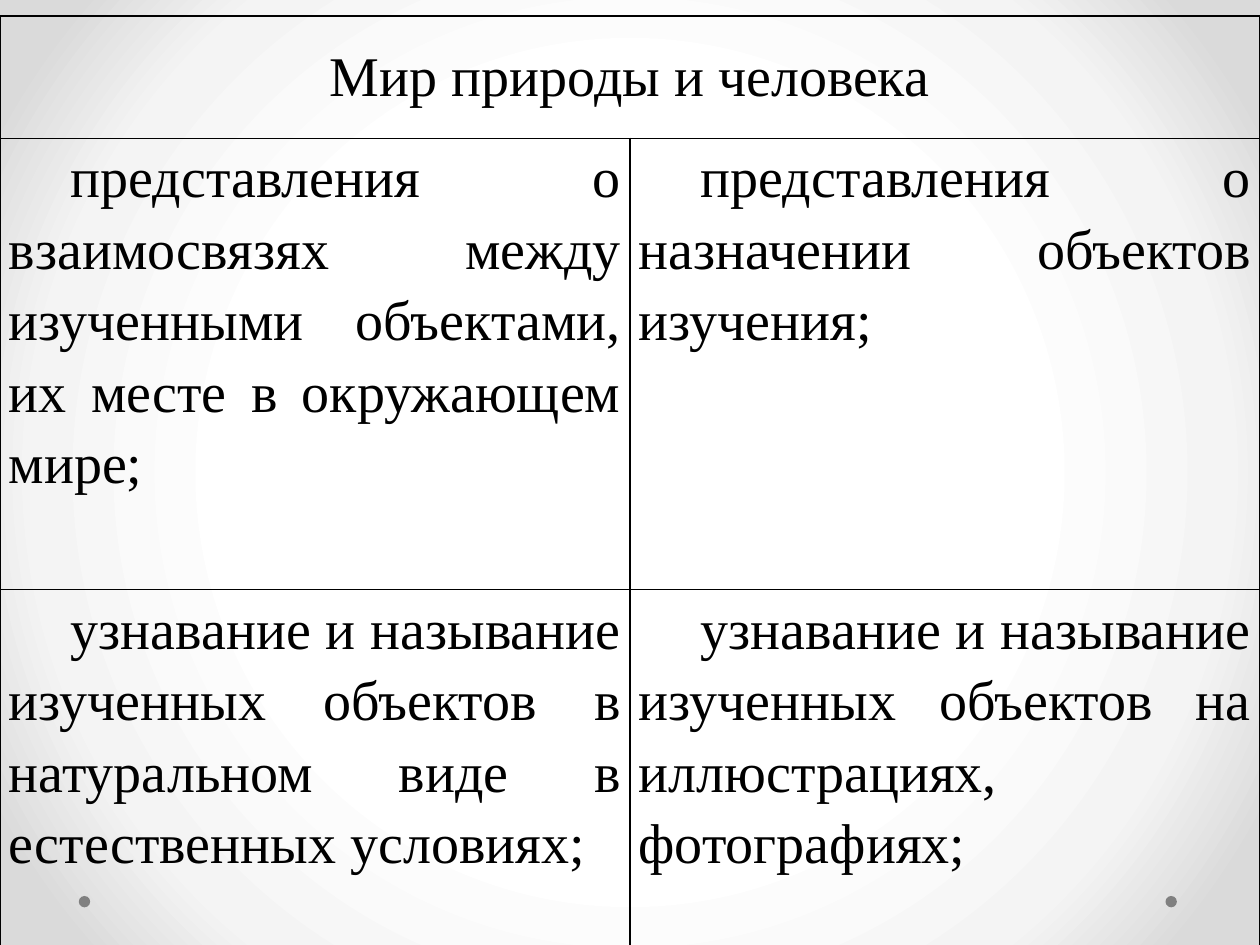
from lxml.etree import SubElement
from pptx import Presentation
from pptx.dml.color import RGBColor
from pptx.enum.shapes import MSO_SHAPE
from pptx.enum.text import PP_ALIGN
from pptx.oxml import parse_xml
from pptx.oxml.ns import nsdecls, qn
from pptx.util import Pt


class Theme:
    ink = "000000"
    dot = "808080"
    fade = [(50, "FFFFFF"), (76, "F4F4F4"), (92, "DADADA")]
    font = "Times New Roman"
    size = Pt(32)
    line = Pt(1)


WIDE, HIGH = 720, 540
TITLE = "Мир природы и человека"
ROWS = [
    ("представления о взаимосвязях между изученными объектами, "
     "их месте в окружающем мире;",
     "представления о назначении объектов изучения;"),
    ("узнавание и называние изученных объектов в натуральном виде "
     "в естественных условиях;",
     "узнавание и называние изученных объектов на иллюстрациях, "
     "фотографиях;"),
]
TALL = [70, 258, 255]

INSET = {"margin_left": Pt(5), "margin_right": Pt(5),
         "margin_top": 0, "margin_bottom": 0}
HEAD = {"alignment": PP_ALIGN.CENTER, "line_spacing": 1.5}
BODY = {"alignment": PP_ALIGN.JUSTIFY, "line_spacing": 1.15}
FONT = {"name": Theme.font, "size": Theme.size, "bold": False}
PLAIN = {"first_row": False, "horz_banding": False}


def apply(item, form):
    for key, value in form.items():
        setattr(item, key, value)


def set_back(slide):
    """Radial fade from a white centre; python-pptx has only linear ones."""
    stops = "".join(
        f'<a:gs pos="{pos * 1000}"><a:srgbClr val="{color}"/></a:gs>'
        for pos, color in Theme.fade)
    fade = parse_xml(
        f'<a:gradFill {nsdecls("a")} rotWithShape="1"><a:gsLst>{stops}</a:gsLst>'
        '<a:path path="circle"><a:fillToRect l="50000" t="50000" '
        'r="50000" b="50000"/></a:path></a:gradFill>')
    fill = slide.background.fill
    fill.solid()
    old = slide.element.find(".//" + qn("p:bgPr")).find(qn("a:solidFill"))
    old.getparent().replace(old, fade)


def add_dot(slide, left):
    dot = slide.shapes.add_shape(
        MSO_SHAPE.OVAL, Pt(left), Pt(512), Pt(6.5), Pt(6.5))
    dot.shadow.inherit = False
    dot.fill.solid()
    dot.fill.fore_color.rgb = RGBColor.from_string(Theme.dot)
    dot.line.fill.background()


def frame(cell):
    """Draw the four borders and leave the cell clear."""
    props = cell._tc.get_or_add_tcPr()
    for side in ("lnL", "lnR", "lnT", "lnB"):
        line = SubElement(props, qn("a:" + side), w=str(Theme.line))
        fill = SubElement(line, qn("a:solidFill"))
        SubElement(fill, qn("a:srgbClr"), val=Theme.ink)
    cell.fill.background()


def write(cell, text, form, indent=0):
    para = cell.text_frame.paragraphs[0]
    apply(para, form)
    para._p.get_or_add_pPr().set("indent", str(Pt(indent)))
    run = para.add_run()
    run.text = text
    apply(run.font, FONT)
    run.font.color.rgb = RGBColor.from_string(Theme.ink)


def add_grid(slide):
    grid = slide.shapes.add_table(
        len(TALL), 2, 0, Pt(9), Pt(WIDE), Pt(sum(TALL))).table
    apply(grid, PLAIN)
    for row, tall in zip(grid.rows, TALL):
        row.height = Pt(tall)
    for cell in grid.iter_cells():
        apply(cell, INSET)
        frame(cell)

    # Heading across both columns
    grid.cell(0, 0).merge(grid.cell(0, 1))
    write(grid.cell(0, 0), TITLE, HEAD)

    # Paired skills
    for r, pair in enumerate(ROWS, 1):
        for c, text in enumerate(pair):
            write(grid.cell(r, c), text, BODY, indent=35.4)


def main():
    deck = Presentation()
    apply(deck, {"slide_width": Pt(WIDE), "slide_height": Pt(HIGH)})
    slide = deck.slides.add_slide(deck.slide_layouts[6])
    set_back(slide)
    for left in (666, 45):
        add_dot(slide, left)
    add_grid(slide)
    deck.save("out.pptx")


if __name__ == "__main__":
    main()
